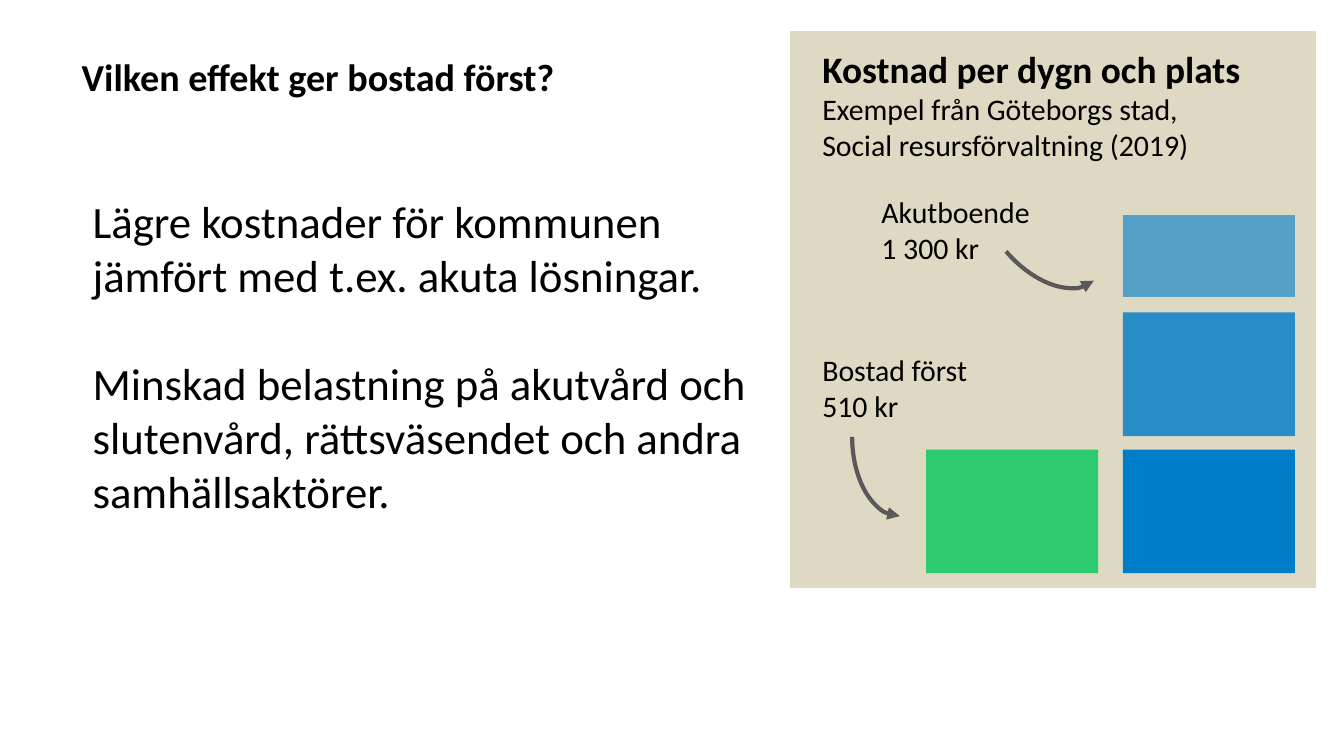
"""Build a slide on the effects and daily costs of housing first."""
import copy
import dataclasses

import lxml.etree
import pptx
import pptx.dml.color
import pptx.enum.shapes
import pptx.enum.text
import pptx.oxml.ns
import pptx.util

SCALE = 4572
KIND = pptx.enum.shapes.MSO_SHAPE
ANCHOR = pptx.enum.text.MSO_ANCHOR
BLUE, GREEN, SAND, GREY = "007DC8", "2DCB70", "DDD9C3", "595959"
WIDE, TALL = 256, 184
RIGHT, LEFT, BASE = 1671, 1378, 669


@dataclasses.dataclass
class Box:
    """A place on the slide in px."""
    left: int
    top: int
    width: int
    height: int

    def emu(self) -> list:
        """Return the four lengths in EMU."""
        return [pptx.util.Emu(n * SCALE) for n in dataclasses.astuple(self)]


@dataclasses.dataclass
class Line:
    """A paragraph and its format."""
    text: str
    size: float = 16
    bold: bool = False
    before: float = 0


@dataclasses.dataclass
class Note:
    """A text box with its paragraphs."""
    box: Box
    lines: list[Line]
    anchor: ANCHOR = ANCHOR.TOP


@dataclasses.dataclass
class Block:
    """A filled bar part with its opacity in percent."""
    box: Box
    color: str
    alpha: int = 100


@dataclasses.dataclass
class Arrow:
    """A curved arrow turned by degrees."""
    box: Box
    turn: float


NOTES = [
    Note(Box(102, 74, 1800, 78),
         [Line("Vilken effekt ger bostad först?", 20.4, True)], ANCHOR.MIDDLE),
    Note(Box(118, 279, 1070, 504), [
        Line("Lägre kostnader för kommunen jämfört med t.ex. akuta lösningar.", 24),
        Line("Minskad belastning på akutvård och slutenvård, rättsväsendet "
             "och andra samhällsaktörer.", 24, before=29)]),
    Note(Box(1204, 59, 820, 398), [
        Line("Kostnad per dygn och plats", 20, True),
        Line("Exempel från Göteborgs stad,\vSocial resursförvaltning (2019)")]),
    Note(Box(1204, 514, 298, 128), [Line("Bostad först"), Line("510 kr")]),
    Note(Box(1292, 279, 322, 188), [Line("Akutboende"), Line("1 300 kr")]),
]
BLOCKS = [
    Block(Box(RIGHT, BASE, WIDE, TALL), BLUE),
    Block(Box(RIGHT, 320, WIDE, 122), BLUE, 61),
    Block(Box(RIGHT, 465, WIDE, TALL), BLUE, 82),
    Block(Box(LEFT, BASE, WIDE, TALL), GREEN),
]
ARROWS = [Arrow(Box(1268, 532, 142, 236), 180),
          Arrow(Box(1480, 210, 142, 236), 139.5)]


def shade(code: str) -> pptx.dml.color.RGBColor:
    """Turn a hex string into a colour."""
    return pptx.dml.color.RGBColor.from_string(code)


def apply(thing, form: dict) -> None:
    """Set each format value on a thing."""
    for name, value in form.items():
        setattr(thing, name, value)


def child(node, tag: str, **form: str) -> None:
    """Append a drawing element with attributes."""
    lxml.etree.SubElement(node, pptx.oxml.ns.qn(tag), form)


def draw_note(slide, note: Note) -> None:
    """Draw a text box."""
    frame = slide.shapes.add_textbox(*note.box.emu()).text_frame
    apply(frame, {"word_wrap": True, "vertical_anchor": note.anchor})
    for index, line in enumerate(note.lines):
        para = frame.add_paragraph() if index else frame.paragraphs[0]
        apply(para, {"text": line.text,
                     "space_before": pptx.util.Pt(line.before)})
        for run in para.runs:
            apply(run.font, {"name": "Calibri", "bold": line.bold,
                             "size": pptx.util.Pt(line.size)})
            run.font.color.rgb = shade("000000")
        for gap in para._p.findall(pptx.oxml.ns.qn("a:br")):
            gap.append(copy.deepcopy(para.runs[0]._r.rPr))


def draw_block(slide, block: Block):
    """Draw a filled rectangle without a line and return it."""
    shape = slide.shapes.add_shape(KIND.RECTANGLE, *block.box.emu())
    shape.shadow.inherit = False
    shape.fill.solid()
    shape.fill.fore_color.rgb = shade(block.color)
    shape.line.fill.background()
    if block.alpha < 100:
        tone = shape.fill._xPr.find(".//" + pptx.oxml.ns.qn("a:srgbClr"))
        child(tone, "a:alpha", val=str(block.alpha * 1000))
    return shape


def draw_edge(shape, color: str, width: float) -> None:
    """Give a shape a solid line."""
    shape.line.color.rgb = shade(color)
    shape.line.width = pptx.util.Pt(width)


def draw_arrow(slide, arrow: Arrow) -> None:
    """Draw an arc with an arrowhead at its start."""
    shape = slide.shapes.add_shape(KIND.ARC, *arrow.box.emu())
    shape.rotation = arrow.turn
    shape.shadow.inherit = False
    shape.fill.background()
    draw_edge(shape, GREY, 2.25)
    child(shape.line._get_or_add_ln(), "a:headEnd", type="triangle")


def main() -> None:
    """Build and save the slide."""
    deck = pptx.Presentation()
    apply(deck, {"slide_width": pptx.util.Emu(2000 * SCALE),
                 "slide_height": pptx.util.Emu(1125 * SCALE)})
    slide = deck.slides.add_slide(deck.slide_layouts[6])
    panel = draw_block(slide, Block(Box(1173, 43, 788, 835), SAND))
    draw_edge(panel, "FFFFFF", 2)
    for block in BLOCKS:
        draw_block(slide, block)
    for note in NOTES:
        draw_note(slide, note)
    for arrow in ARROWS:
        draw_arrow(slide, arrow)
    deck.save("out.pptx")


if __name__ == "__main__":
    main()
